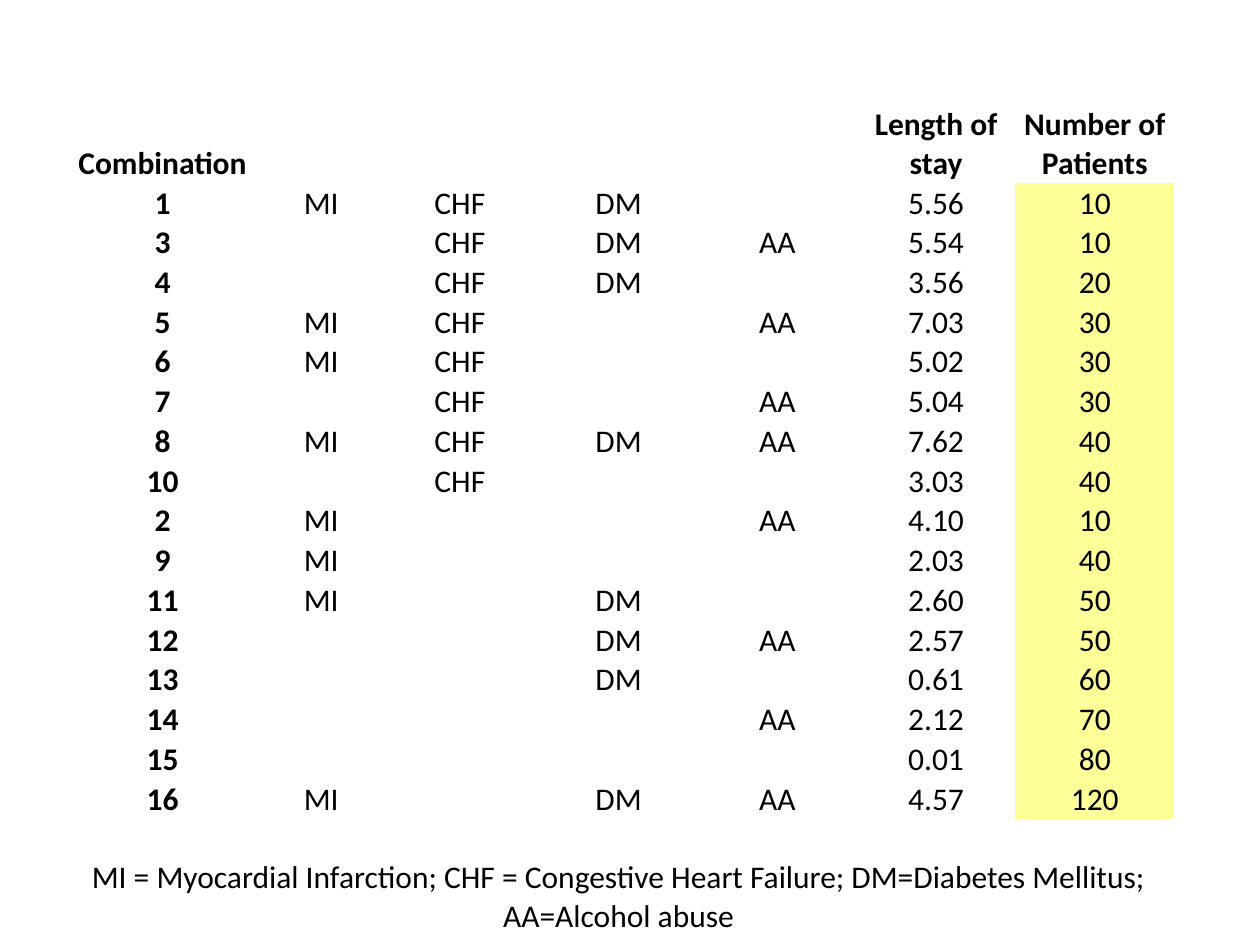
"""Build a slide tabulating length of stay for each combination of diagnoses."""
from pptx import Presentation, util as u
from pptx.dml.color import RGBColor
from pptx.enum import text
from pptx.oxml.ns import qn

COLORS = {"ink": "000000", "patients": "FFFF99"}
NO_STYLE = "{2D5ABB26-0587-4C30-8999-92F81FD0307C}"
DIAGNOSES = ["MI", "CHF", "DM", "AA"]
HEADER = ["Combination", "", "", "", "", "Length of stay", "Number of Patients"]
COMBINATIONS = [
    (1, "MI CHF DM", "5.56", 10),
    (3, "CHF DM AA", "5.54", 10),
    (4, "CHF DM", "3.56", 20),
    (5, "MI CHF AA", "7.03", 30),
    (6, "MI CHF", "5.02", 30),
    (7, "CHF AA", "5.04", 30),
    (8, "MI CHF DM AA", "7.62", 40),
    (10, "CHF", "3.03", 40),
    (2, "MI AA", "4.10", 10),
    (9, "MI", "2.03", 40),
    (11, "MI DM", "2.60", 50),
    (12, "DM AA", "2.57", 50),
    (13, "DM", "0.61", 60),
    (14, "AA", "2.12", 70),
    (15, "", "0.01", 80),
    (16, "MI DM AA", "4.57", 120),
]
LEGEND = ("MI = Myocardial Infarction; CHF = Congestive Heart Failure; "
          "DM=Diabetes Mellitus; AA=Alcohol abuse")

LEFT, TOP = 0.5, 0.83
COLUMN_WIDTHS = [1.58, 0.94] + [1.26] * 5
ROW_HEIGHTS = [0.62] + [0.21] * len(COMBINATIONS) + [0.93]
CELL_FORMAT = {
    "margin_left": u.Inches(0.01),
    "margin_right": u.Inches(0.01),
    "margin_top": u.Inches(0.01),
    "margin_bottom": 0,
    "vertical_anchor": text.MSO_ANCHOR.BOTTOM,
}
FONT_FORMAT = {"name": "Calibri", "size": u.Pt(18)}


def combination_row(number, present, stay, patients):
    marks = [name if name in present.split() else "" for name in DIAGNOSES]
    return [str(number), *marks, stay, str(patients)]


def write_cell(cell, content, bold=False, fill=None):
    for name, value in CELL_FORMAT.items():
        setattr(cell, name, value)
    if fill:
        cell.fill.solid()
        cell.fill.fore_color.rgb = RGBColor.from_string(COLORS[fill])
    else:
        cell.fill.background()
    if not content:
        return
    paragraph = cell.text_frame.paragraphs[0]
    paragraph.alignment = text.PP_ALIGN.CENTER
    run = paragraph.add_run()
    run.text = content
    for name, value in {**FONT_FORMAT, "bold": bold}.items():
        setattr(run.font, name, value)
    run.font.color.rgb = RGBColor.from_string(COLORS["ink"])


def add_stay_table(slide):
    frame = slide.shapes.add_table(
        len(ROW_HEIGHTS), len(COLUMN_WIDTHS), u.Inches(LEFT), u.Inches(TOP),
        u.Inches(sum(COLUMN_WIDTHS)), u.Inches(sum(ROW_HEIGHTS)))
    table = frame.table
    table.first_row = table.horz_banding = False
    frame.element.find(".//" + qn("a:tableStyleId")).text = NO_STYLE
    for column, width in zip(table.columns, COLUMN_WIDTHS):
        column.width = u.Inches(width)
    for row, height in zip(table.rows, ROW_HEIGHTS):
        row.height = u.Inches(height)

    last_row, last_column = len(ROW_HEIGHTS) - 1, len(COLUMN_WIDTHS) - 1
    rows = [HEADER] + [combination_row(*entry) for entry in COMBINATIONS]
    for r, contents in enumerate(rows):
        for c, content in enumerate(contents):
            fill = "patients" if r and c == last_column else None
            write_cell(table.cell(r, c), content, r == 0 or c == 0, fill)

    legend = table.cell(last_row, 0)
    legend.merge(table.cell(last_row, last_column))
    write_cell(legend, LEGEND)


def main():
    presentation = Presentation()
    presentation.slide_width, presentation.slide_height = u.Inches(10), u.Inches(7.5)
    slide = presentation.slides.add_slide(presentation.slide_layouts[6])
    add_stay_table(slide)
    presentation.save("out.pptx")


if __name__ == "__main__":
    main()
